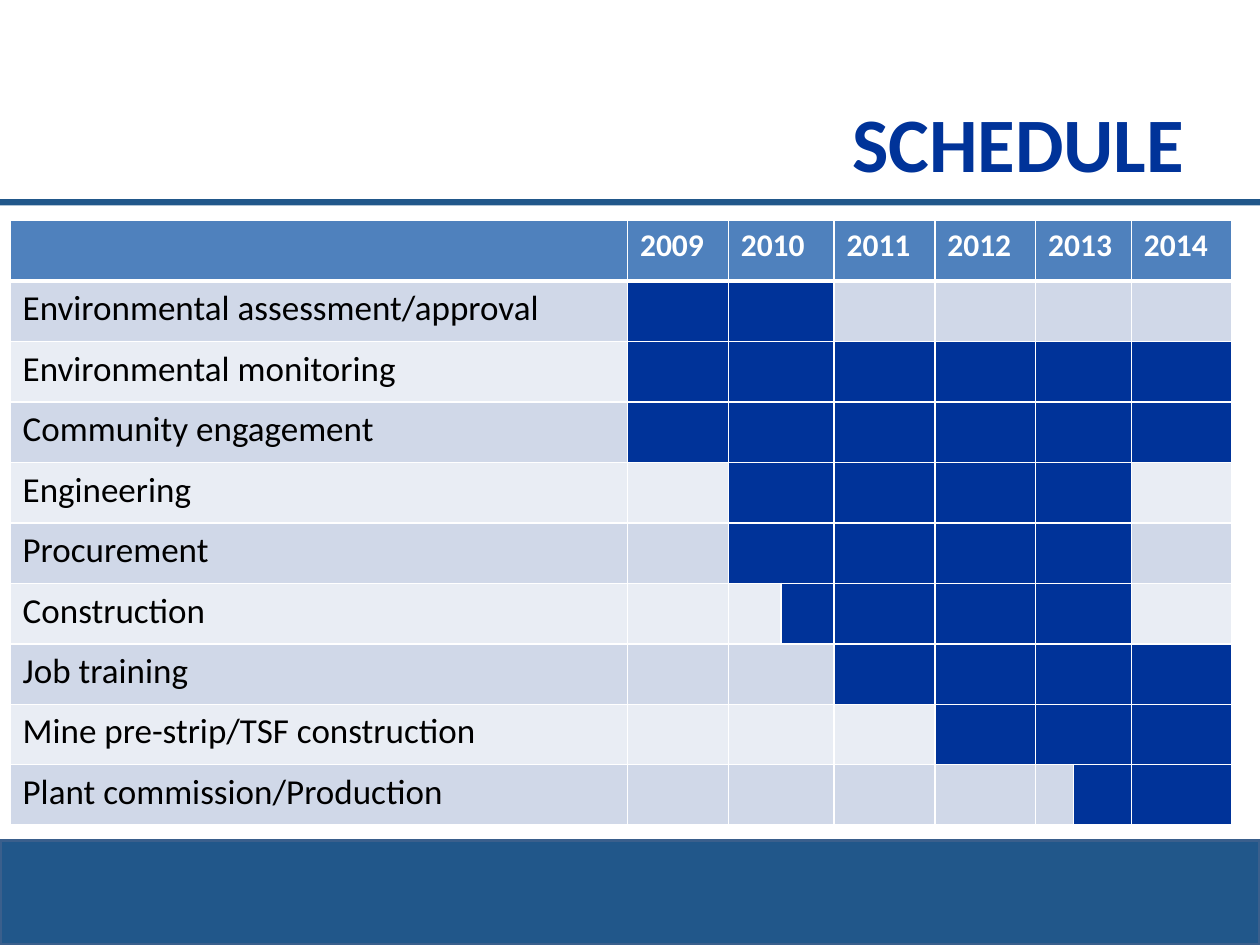
"""Build the project schedule slide with its year-by-year bar table."""
from dataclasses import dataclass

import pptx
import pptx.dml.color
import pptx.enum.shapes
import pptx.enum.text
import pptx.oxml
import pptx.oxml.ns
import pptx.util

Inches = pptx.util.Inches
Pt = pptx.util.Pt
NAVY, BAND, HEADER, WHITE = "003399", "21578A", "4F81BD", "FFFFFF"
ROW_FILLS = ("D0D8E8", "E9EDF4")
COL_WIDTHS = (4.9, 0.8, 0.42, 0.42, 0.8, 0.8, 0.3, 0.46, 0.8)
ROW_HEIGHT = 0.48
YEAR_COLS = {1: "2009", 2: "2010", 4: "2011", 5: "2012", 6: "2013", 8: "2014"}
SPLIT_YEARS = ((2, 3), (6, 7))


@dataclass
class Task:
    name: str
    first: int
    last: int


TASKS = (
    Task("Environmental assessment/approval", 1, 3),
    Task("Environmental monitoring", 1, 8),
    Task("Community engagement", 1, 8),
    Task("Engineering", 2, 7),
    Task("Procurement", 2, 7),
    Task("Construction", 3, 7),
    Task("Job training", 4, 8),
    Task("Mine pre-strip/TSF construction", 5, 8),
    Task("Plant commission/Production", 7, 8),
)


def rgb(value: str) -> pptx.dml.color.RGBColor:
    return pptx.dml.color.RGBColor.from_string(value)


def add_run(p, text: str, size: float, color: str, bold: bool = False) -> None:
    r = p.add_run()
    r.text = text
    r.font.name = "Calibri"
    r.font.size = Pt(size)
    r.font.bold = bold
    r.font.color.rgb = rgb(color)


def add_band(s, top: float, height: float, outline: str = "") -> None:
    sp = s.shapes.add_shape(pptx.enum.shapes.MSO_SHAPE.RECTANGLE,
                            Inches(0), Inches(top), Inches(10), Inches(height))
    sp.shadow.inherit = False
    sp.fill.solid()
    sp.fill.fore_color.rgb = rgb(BAND)
    if outline:
        sp.line.color.rgb = rgb(outline)
        sp.line.width = Pt(2)
    else:
        sp.line.fill.background()


def add_title(s, text: str) -> None:
    sp = s.shapes.add_textbox(Inches(2.25), Inches(0.5), Inches(7.25), Inches(1.25))
    tf = sp.text_frame
    tf.word_wrap = True
    tf.vertical_anchor = pptx.enum.text.MSO_ANCHOR.MIDDLE
    p = tf.paragraphs[0]
    p.alignment = pptx.enum.text.PP_ALIGN.RIGHT
    add_run(p, text, 44, NAVY, True)


def style_cell(cell, fill: str, top: float = 1, bottom: float = 1) -> None:
    tc_pr = cell._tc.get_or_add_tcPr()
    for side, width in (("L", 1), ("R", 1), ("T", top), ("B", bottom)):
        tc_pr.append(pptx.oxml.parse_xml(
            f'<a:ln{side} {pptx.oxml.ns.nsdecls("a")} w="{Pt(width)}"><a:solidFill>'
            f'<a:srgbClr val="{WHITE}"/></a:solidFill></a:ln{side}>'))
    cell.fill.solid()
    cell.fill.fore_color.rgb = rgb(fill)


def add_schedule(s) -> None:
    rows = len(TASKS) + 1
    table = s.shapes.add_table(rows, len(COL_WIDTHS), Inches(0.08), Inches(1.75),
                               Inches(sum(COL_WIDTHS)), Inches(ROW_HEIGHT * rows)).table
    for column, width in zip(table.columns, COL_WIDTHS):
        column.width = Inches(width)
    for row in table.rows:
        row.height = Inches(ROW_HEIGHT)
    for col in range(len(COL_WIDTHS)):
        cell = table.cell(0, col)
        style_cell(cell, HEADER, bottom=3)
        if col in YEAR_COLS:
            add_run(cell.text_frame.paragraphs[0], YEAR_COLS[col], 18, WHITE, True)
    for i, task in enumerate(TASKS):
        for col in range(len(COL_WIDTHS)):
            active = task.first <= col <= task.last
            style_cell(table.cell(i + 1, col), NAVY if active else ROW_FILLS[i % 2],
                       top=3 if i == 0 else 1)
        add_run(table.cell(i + 1, 0).text_frame.paragraphs[0], task.name, 20, "000000")
    for left, right in SPLIT_YEARS:
        for row, first in enumerate([0] + [task.first for task in TASKS]):
            if first != right:
                table.cell(row, left).merge(table.cell(row, right))


def main() -> None:
    prs = pptx.Presentation()
    prs.slide_width, prs.slide_height = Inches(10), Inches(7.5)
    s = prs.slides.add_slide(prs.slide_layouts[6])
    add_band(s, 1.58, 0.05)
    add_band(s, 6.67, 0.83, "3A5F8C")
    add_title(s, "SCHEDULE")
    add_schedule(s)
    prs.save("out.pptx")


if __name__ == "__main__":
    main()
